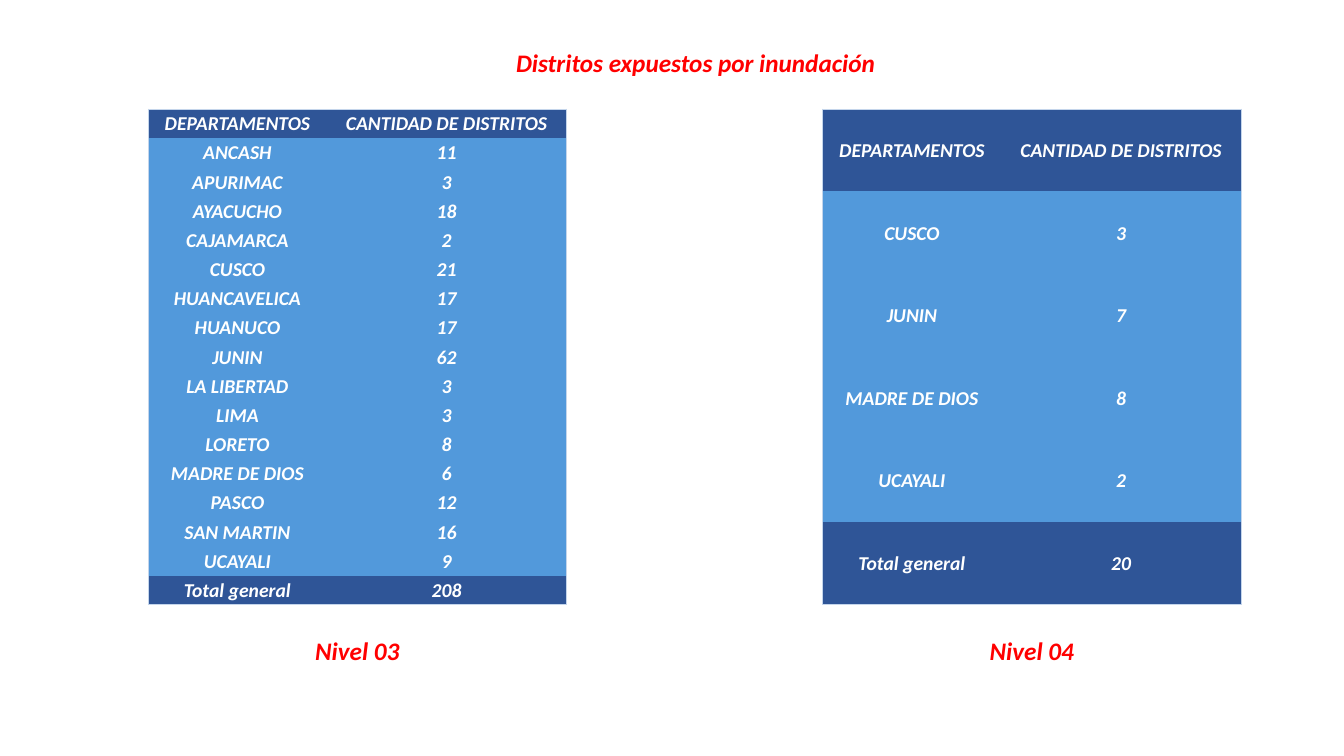
from lxml import etree
from pptx import Presentation
from pptx.dml.color import RGBColor
from pptx.enum import text as t
from pptx.oxml import ns
from pptx.util import Inches, Pt

FONT = "Calibri"
RED = RGBColor(0xFF, 0x00, 0x00)
WHITE = RGBColor(0xFF, 0xFF, 0xFF)
NAVY = RGBColor(0x2F, 0x55, 0x97)
SKY = RGBColor(0x52, 0x99, 0xDB)
EDGE = RGBColor(0xC4, 0xD5, 0xEB)

HEADER = ("DEPARTAMENTOS", "CANTIDAD DE DISTRITOS")
LEVEL_3 = [
    ("ANCASH", 11), ("APURIMAC", 3), ("AYACUCHO", 18), ("CAJAMARCA", 2),
    ("CUSCO", 21), ("HUANCAVELICA", 17), ("HUANUCO", 17), ("JUNIN", 62),
    ("LA LIBERTAD", 3), ("LIMA", 3), ("LORETO", 8), ("MADRE DE DIOS", 6),
    ("PASCO", 12), ("SAN MARTIN", 16), ("UCAYALI", 9),
]
LEVEL_4 = [("CUSCO", 3), ("JUNIN", 7), ("MADRE DE DIOS", 8), ("UCAYALI", 2)]
COLUMN_WIDTHS = (1.77, 2.38)


def write(frame, wording, size, color):
    """Centred bold italic line, shared by title, captions and cells."""
    frame.text = wording
    line = frame.paragraphs[0]
    line.alignment = t.PP_ALIGN.CENTER
    font = line.runs[0].font
    font.name, font.size, font.color.rgb = FONT, Pt(size), color
    font.bold = font.italic = True


def set_borders(cell, outer_sides):
    """Thin line on the outer sides of the table, none on the inner ones."""
    properties = cell._tc.get_or_add_tcPr()
    for index, side in enumerate("LRTB"):
        border = etree.Element(ns.qn(f"a:ln{side}"), w=str(Pt(0.5)))
        if side in outer_sides:
            fill = etree.SubElement(border, ns.qn("a:solidFill"))
            etree.SubElement(fill, ns.qn("a:srgbClr"), val=str(EDGE))
        else:
            etree.SubElement(border, ns.qn("a:noFill"))
        properties.insert(index, border)


def add_title(slide, left, top, width, height):
    title = slide.shapes.title
    title.left, title.top = Inches(left), Inches(top)
    title.width, title.height = Inches(width), Inches(height)
    frame = title.text_frame
    write(frame, "Distritos expuestos por inundación", 18, RED)
    frame.word_wrap = False
    frame.vertical_anchor = t.MSO_ANCHOR.MIDDLE


def add_level(slide, caption, districts, left, top, width, height):
    # Table with header, departments and computed total
    total = sum(count for _, count in districts)
    rows = [HEADER, *districts, ("Total general", total)]
    last = len(rows) - 1
    table = slide.shapes.add_table(
        len(rows), len(HEADER), Inches(left), Inches(top),
        Inches(width), Inches(height)).table
    table.first_row = table.horz_banding = False
    for column, column_width in zip(table.columns, COLUMN_WIDTHS):
        column.width = Inches(column_width)
    for r, row in enumerate(rows):
        table.rows[r].height = Inches(height / len(rows))
        for c, value in enumerate(row):
            cell = table.cell(r, c)
            cell.margin_left = cell.margin_right = cell.margin_top = Inches(0.01)
            cell.margin_bottom = 0
            cell.vertical_anchor = t.MSO_ANCHOR.MIDDLE
            cell.fill.solid()
            cell.fill.fore_color.rgb = NAVY if r in (0, last) else SKY
            write(cell.text_frame, str(value), 14, WHITE)
            vertical = {0: "T", last: "B"}.get(r, "")
            set_borders(cell, "LR"[c] + vertical)

    # Caption centred under the table
    caption_width = 1.2
    label = slide.shapes.add_textbox(
        Inches(left + (width - caption_width) / 2),
        Inches(top + height + 0.25), Inches(caption_width), Inches(0.4))
    label.text_frame.word_wrap = True
    write(label.text_frame, caption, 18, RED)


def main():
    deck = Presentation()
    deck.slide_width, deck.slide_height = Inches(13.33), Inches(7.5)
    slide = deck.slides.add_slide(deck.slide_layouts[5])
    add_title(slide, 5, 0.42, 3.8, 0.4)
    add_level(slide, "Nivel 03", LEVEL_3, 1.47, 1.08, 4.15, 4.92)
    add_level(slide, "Nivel 04", LEVEL_4, 8.16, 1.08, 4.15, 4.92)
    deck.save("out.pptx")


if __name__ == "__main__":
    main()
